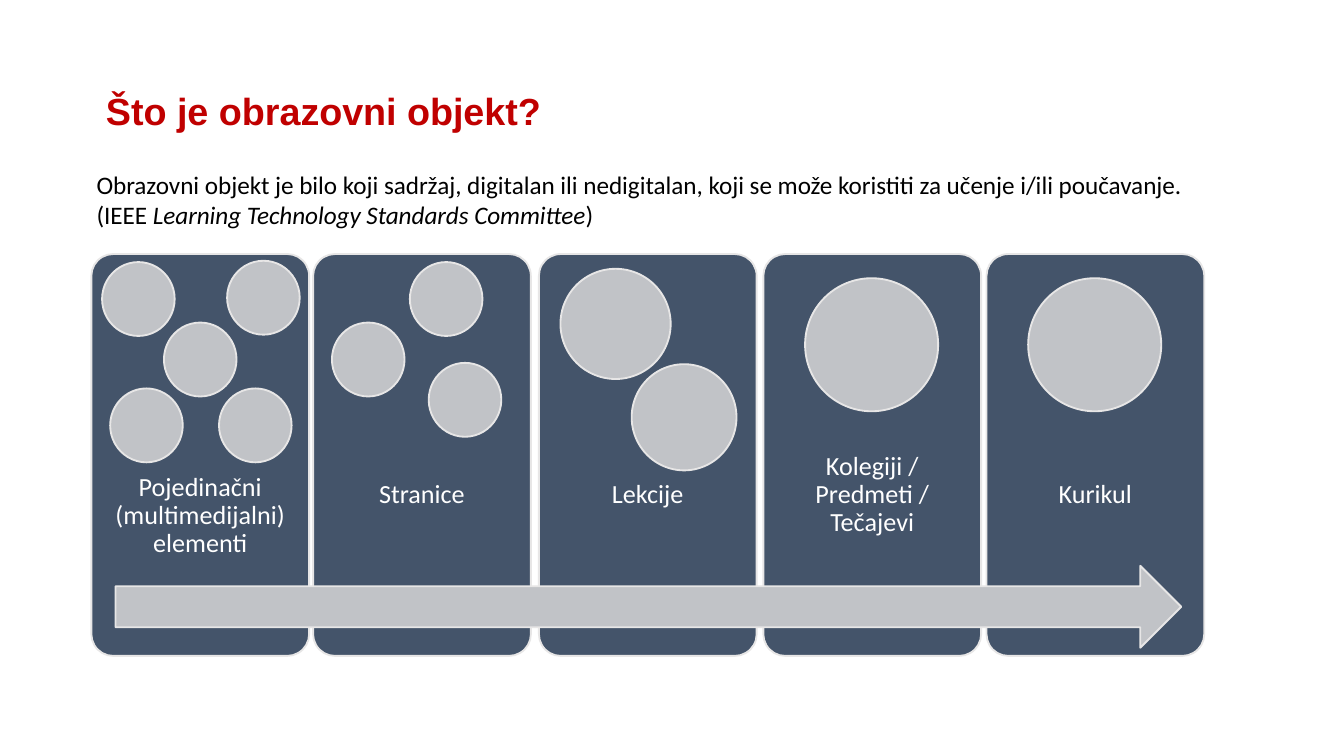
import pptx
import pptx.util
import pptx.dml.color
import pptx.enum.shapes
import pptx.enum.text

Inches = pptx.util.Inches
SHAPES = pptx.enum.shapes.MSO_SHAPE
ALIGN = pptx.enum.text.PP_ALIGN
ANCHOR = pptx.enum.text.MSO_ANCHOR

SLIDE_WIDTH = Inches(10)
SLIDE_HEIGHT = SLIDE_WIDTH * 9 // 16

COLOURS = {
    "title": "C00000",
    "body": "000000",
    "card": "44546A",
    "label": "FFFFFF",
    "accent": "C1C3C7",
    "outline": "E7E6E6",
}

TITLE = "Što je obrazovni objekt?"
# Lines of (text, italic) runs
DEFINITION = [
    [("Obrazovni objekt je bilo koji sadržaj, digitalan ili nedigitalan, "
      "koji se može koristiti za učenje i/ili poučavanje. ", False)],
    [("(IEEE ", False), ("Learning Technology Standards Committee", True), (")", False)],
]

# Circle sizes as (width, height)
SMALL, MEDIUM, BIG, LARGE = (0.54, 0.55), (0.78, 0.79), (0.82, 0.82), (0.99, 0.99)
# Each card: label, left edge, extra top inset, circles as (left, top, size)
CARDS = [
    ("Pojedinačni (multimedijalni) elementi", 0.68, 0.31,
     [(0.76, 1.95, SMALL), (1.69, 1.94, SMALL), (1.22, 2.4, SMALL),
      (1.63, 2.89, SMALL), (0.82, 2.89, SMALL)]),
    ("Stranice", 2.33, 0,
     [(3.05, 1.95, SMALL), (2.47, 2.4, SMALL), (3.19, 2.7, SMALL)]),
    ("Lekcije", 4.01, 0, [(4.17, 2, BIG), (4.7, 2.71, MEDIUM)]),
    ("Kolegiji / Predmeti / Tečajevi", 5.68, 0, [(5.99, 2.07, LARGE)]),
    ("Kurikul", 7.34, 0, [(7.65, 2.07, LARGE)]),
]
CARD_TOP, CARD_WIDTH, CARD_HEIGHT = 1.89, 1.62, 2.99
ARROW = (0.86, 4.21, 7.93, 0.61)


def rgb(name):
    return pptx.dml.color.RGBColor.from_string(COLOURS[name])


def set_values(target, **values):
    for name, value in values.items():
        setattr(target, name, value)


def add_run(paragraph, text, font, size, colour, **style):
    run = paragraph.add_run()
    run.text = text
    set_values(run.font, name=font, size=pptx.util.Pt(size), **style)
    run.font.color.rgb = rgb(colour)


def add_shape(slide, kind, box, fill):
    shape = slide.shapes.add_shape(kind, *map(Inches, box))
    shape.shadow.inherit = False
    shape.fill.solid()
    shape.fill.fore_color.rgb = rgb(fill)
    shape.line.color.rgb = rgb("outline")
    shape.line.width = pptx.util.Pt(1)
    return shape


def add_text_box(slide, box, anchor):
    """Return the first paragraph of a new wrapping text box."""
    frame = slide.shapes.add_textbox(*map(Inches, box)).text_frame
    set_values(frame, word_wrap=True, vertical_anchor=anchor)
    return frame.paragraphs[0]


def add_card(slide, label, left, extra_inset):
    card = add_shape(slide, SHAPES.ROUNDED_RECTANGLE,
                     (left, CARD_TOP, CARD_WIDTH, CARD_HEIGHT), "card")
    card.adjustments[0] = 0.1
    frame = card.text_frame
    set_values(frame, word_wrap=True, vertical_anchor=ANCHOR.MIDDLE,
               margin_left=Inches(0.06), margin_right=Inches(0.06),
               margin_top=Inches(1.26 + extra_inset), margin_bottom=Inches(0.66))
    paragraph = frame.paragraphs[0]
    set_values(paragraph, alignment=ALIGN.CENTER, line_spacing=0.9)
    add_run(paragraph, label, "Calibri", 14, "label")


def main():
    presentation = pptx.Presentation()
    set_values(presentation, slide_width=SLIDE_WIDTH, slide_height=SLIDE_HEIGHT)
    slide = presentation.slides.add_slide(presentation.slide_layouts[6])

    title = add_text_box(slide, (0.69, 0.3, 8.62, 1.09), ANCHOR.MIDDLE)
    title.line_spacing = 0.9
    add_run(title, TITLE, "Arial", 20.2, "title", bold=True)

    for label, left, extra_inset, circles in CARDS:
        add_card(slide, label, left, extra_inset)
        for circle_left, top, size in circles:
            add_shape(slide, SHAPES.OVAL, (circle_left, top, *size), "accent")

    definition = add_text_box(slide, (0.62, 1.21, 8.7, 0.56), ANCHOR.TOP)
    for index, line in enumerate(DEFINITION):
        if index:
            definition.add_line_break()
        for text, italic in line:
            add_run(definition, text, "Calibri", 13.5, "body", italic=italic)

    add_shape(slide, SHAPES.RIGHT_ARROW, ARROW, "accent")
    presentation.save("out.pptx")


if __name__ == "__main__":
    main()
